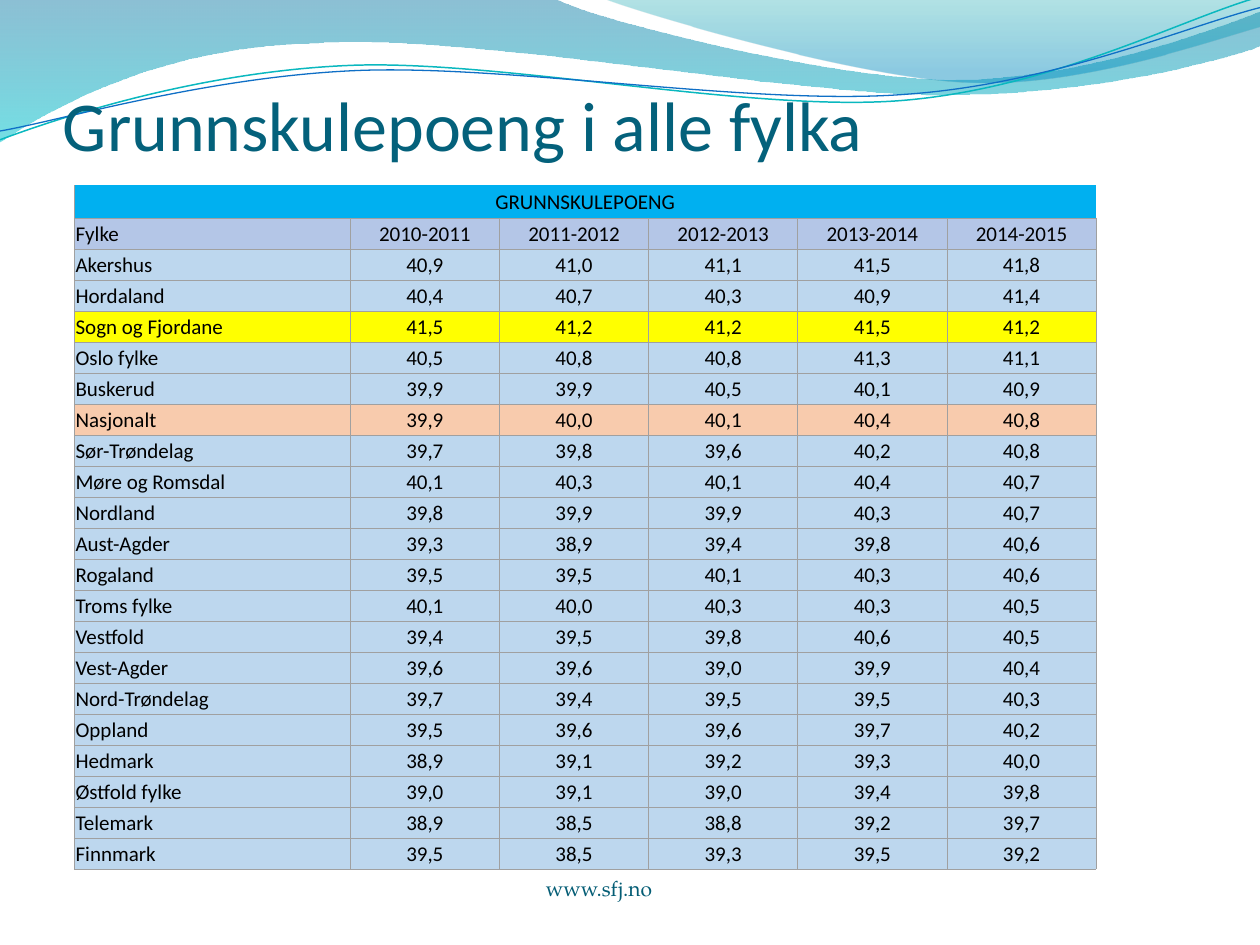
import math

from lxml import etree
from pptx import Presentation
from pptx import util as u
from pptx.dml.color import RGBColor
from pptx.enum import text
from pptx.oxml.ns import qn

COLORS = {
    "title": "04617B", "footer": "045D75", "ink": "000000", "border": "A0A0A0",
    "banner": "00B0F0", "header": "B4C6E7", "county": "BDD7EE",
    "highlight": "FFFF00", "national": "F8CBAD",
    "wave_blue": "0074A1", "wave_cyan": "00C6CF",
    "crest_teal": "00A1A9", "crest_blue": "008BBF",
    "line_teal": "0AB8BF", "line_blue": "0F6FC6",
}

TITLE = "Grunnskulepoeng i alle fylka"
FOOTER = "www.sfj.no"
BANNER = "GRUNNSKULEPOENG"
HEADER = ("Fylke", "2010-2011", "2011-2012", "2012-2013", "2013-2014", "2014-2015")
SCORES = [
    ("Akershus", "40,9", "41,0", "41,1", "41,5", "41,8"),
    ("Hordaland", "40,4", "40,7", "40,3", "40,9", "41,4"),
    ("Sogn og Fjordane", "41,5", "41,2", "41,2", "41,5", "41,2"),
    ("Oslo fylke", "40,5", "40,8", "40,8", "41,3", "41,1"),
    ("Buskerud", "39,9", "39,9", "40,5", "40,1", "40,9"),
    ("Nasjonalt", "39,9", "40,0", "40,1", "40,4", "40,8"),
    ("Sør-Trøndelag", "39,7", "39,8", "39,6", "40,2", "40,8"),
    ("Møre og Romsdal", "40,1", "40,3", "40,1", "40,4", "40,7"),
    ("Nordland", "39,8", "39,9", "39,9", "40,3", "40,7"),
    ("Aust-Agder", "39,3", "38,9", "39,4", "39,8", "40,6"),
    ("Rogaland", "39,5", "39,5", "40,1", "40,3", "40,6"),
    ("Troms fylke", "40,1", "40,0", "40,3", "40,3", "40,5"),
    ("Vestfold", "39,4", "39,5", "39,8", "40,6", "40,5"),
    ("Vest-Agder", "39,6", "39,6", "39,0", "39,9", "40,4"),
    ("Nord-Trøndelag", "39,7", "39,4", "39,5", "39,5", "40,3"),
    ("Oppland", "39,5", "39,6", "39,6", "39,7", "40,2"),
    ("Hedmark", "38,9", "39,1", "39,2", "39,3", "40,0"),
    ("Østfold fylke", "39,0", "39,1", "39,0", "39,4", "39,8"),
    ("Telemark", "38,9", "38,5", "38,8", "39,2", "39,7"),
    ("Finnmark", "39,5", "38,5", "39,3", "39,5", "39,2"),
]
ROW_FILLS = {"Fylke": "header", "Sogn og Fjordane": "highlight", "Nasjonalt": "national"}
PLAIN_TABLE_STYLE = "{2D5ABB26-0587-4C30-8999-92F81FD0307C}"

WAVES = [
    ((-0.01, -0.01, 10.02, 1.14),
     [(0, 0), (4.4, -0.01),
      (4.76, 0.17, 6.64, 0.63, 7.58, 0.63), (8.53, 0.63, 9.58, 0.26, 10, 0.09),
      (10.01, 0.36),
      (9.83, 0.44, 8.7, 0.76, 7.46, 0.75), (6.22, 0.75, 3.82, 0.28, 2.57, 0.34),
      (1.29, 0.36, 0.46, 0.83, -0.01, 1.13), (0, 0)],
     [(0, "wave_blue", 45), (1, "wave_cyan", 55)]),
    ((4.79, -0.01, 5.21, 0.7),
     [(4.79, -0.01),
      (5.09, 0.11, 6.82, 0.62, 7.69, 0.65), (8.56, 0.69, 9.61, 0.32, 10, 0.21),
      (10, 0), (4.79, -0.01)],
     [(0, "crest_teal", 30), (0.8, "crest_blue", 45)]),
]
SWEEPS = [
    ((-0.02, 0.22, 10.02, 0.71),
     [(0, 1.11), (0.48, 0.93, 1.58, 0.57, 2.77, 0.52),
      (3.95, 0.47, 5.93, 0.89, 7.13, 0.8), (8.33, 0.71, 9.38, 0.15, 9.98, -0.02)],
     "line_teal", 0.85),
    ((-0.02, 0.3, 10.03, 0.58),
     [(0, 1.04), (0.47, 0.96, 1.64, 0.61, 2.83, 0.56),
      (4.03, 0.51, 5.97, 0.84, 7.17, 0.75), (8.36, 0.67, 9.41, 0.21, 10, 0.06)],
     "line_blue", 0.75),
]
SWEEP_TILT = 2.7


def rgb(name):
    return RGBColor.from_string(COLORS[name])


def turn(x, y, box, degrees):
    left, top, width, height = box
    angle = math.radians(degrees)
    dx, dy = x - left - width / 2, y - top - height / 2
    return (width / 2 + dx * math.cos(angle) - dy * math.sin(angle),
            height / 2 + dx * math.sin(angle) + dy * math.cos(angle))


def add_outline(slide, box, segments, tilt=0, close=False):
    ends = [tuple(map(u.Inches, segment[-2:])) for segment in segments]
    builder = slide.shapes.build_freeform(*ends[0])
    builder.add_line_segments(ends[1:], close=close)
    shape = builder.convert_to_shape()
    shape.shadow.inherit = False
    shape.left, shape.top, shape.width, shape.height = map(u.Inches, box)
    shape.rotation = -tilt

    outline = next(shape._element.iter(qn("a:path")))
    outline.set("w", str(shape.width))
    outline.set("h", str(shape.height))
    for command, segment in zip(list(outline), segments):
        if len(segment) == 6:
            curve = etree.Element(qn("a:cubicBezTo"))
            outline.replace(command, curve)
            command = curve
        for point in list(command):
            command.remove(point)
        for x, y in zip(segment[::2], segment[1::2]):
            local_x, local_y = turn(x, y, box, tilt)
            etree.SubElement(command, qn("a:pt"),
                             x=str(u.Inches(local_x)), y=str(u.Inches(local_y)))
    return shape


def add_wave(slide, box, segments, stops):
    shape = add_outline(slide, box, segments, close=True)
    shape.line.fill.background()
    shape.fill.gradient()
    shape.fill.gradient_angle = 270
    for stop, (position, color, _) in zip(shape.fill.gradient_stops, stops):
        stop.position = position
        stop.color.rgb = rgb(color)
    for element, (_, _, opacity) in zip(shape._element.spPr.iter(qn("a:srgbClr")), stops):
        etree.SubElement(element, qn("a:alpha"), val=str(opacity * 1000))


def add_sweep(slide, box, segments, color, width):
    shape = add_outline(slide, box, segments, tilt=SWEEP_TILT)
    shape.fill.background()
    shape.line.color.rgb = rgb(color)
    shape.line.width = u.Pt(width)


def write(frame, content, size=12, font="Calibri", color="ink", align="LEFT"):
    paragraph = frame.paragraphs[0]
    paragraph.alignment = getattr(text.PP_ALIGN, align)
    run = paragraph.add_run()
    run.text = content
    run.font.size = u.Pt(size)
    run.font.name = font
    run.font.color.rgb = rgb(color)


def add_text(slide, content, box, anchor, top_inset=0, **style):
    frame = slide.shapes.add_textbox(*map(u.Inches, box)).text_frame
    frame.word_wrap = True
    frame.vertical_anchor = anchor
    frame.margin_left = frame.margin_right = frame.margin_bottom = 0
    frame.margin_top = u.Inches(top_inset)
    write(frame, content, **style)


def style_cell(cell, fill, sides):
    properties = cell._tc.get_or_add_tcPr()
    for side in sides:
        line = etree.SubElement(properties, qn(f"a:ln{side}"), w=str(u.Pt(0.5)))
        solid = etree.SubElement(line, qn("a:solidFill"))
        etree.SubElement(solid, qn("a:srgbClr"), val=COLORS["border"])
    cell.fill.solid()
    cell.fill.fore_color.rgb = rgb(fill)
    cell.vertical_anchor = text.MSO_ANCHOR.MIDDLE
    cell.margin_left = cell.margin_right = cell.margin_top = u.Inches(0.01)
    cell.margin_bottom = 0


def add_score_table(slide):
    left, top, width, height = 0.59, 1.47, 8.11, 5.43
    name_width, banner_height = 2.19, 0.26
    rows = [HEADER] + SCORES
    table = slide.shapes.add_table(len(rows) + 1, len(HEADER),
                                   *map(u.Inches, (left, top, width, height))).table
    table.first_row = table.horz_banding = False
    next(table._tbl.iter(qn("a:tableStyleId"))).text = PLAIN_TABLE_STYLE
    for index, column in enumerate(table.columns):
        column.width = u.Inches((width - name_width) / (len(HEADER) - 1) if index else name_width)
    for index, row in enumerate(table.rows):
        row.height = u.Inches((height - banner_height) / len(rows) if index else banner_height)

    for column in range(len(HEADER)):
        style_cell(table.cell(0, column), "banner", "B" if column else "LB")
    table.cell(0, 0).merge(table.cell(0, len(HEADER) - 1))
    write(table.cell(0, 0).text_frame, BANNER, align="CENTER")
    for row, values in enumerate(rows, 1):
        for column, value in enumerate(values):
            cell = table.cell(row, column)
            style_cell(cell, ROW_FILLS.get(values[0], "county"), "LRTB")
            write(cell.text_frame, value, align="CENTER" if column else "LEFT")


def main():
    presentation = Presentation()
    presentation.slide_width, presentation.slide_height = u.Inches(10), u.Inches(7.5)
    slide = presentation.slides.add_slide(presentation.slide_layouts[6])
    for wave in WAVES:
        add_wave(slide, *wave)
    for sweep in SWEEPS:
        add_sweep(slide, *sweep)
    add_text(slide, TITLE, (0.5, 0.77, 9, 0.54), text.MSO_ANCHOR.BOTTOM,
             top_inset=0.05, size=40, color="title")
    add_score_table(slide)
    add_text(slide, FOOTER, (2.92, 6.95, 3.67, 0.4), text.MSO_ANCHOR.TOP,
             font="TeX Gyre Pagella", color="footer", align="CENTER")
    presentation.save("out.pptx")


if __name__ == "__main__":
    main()
